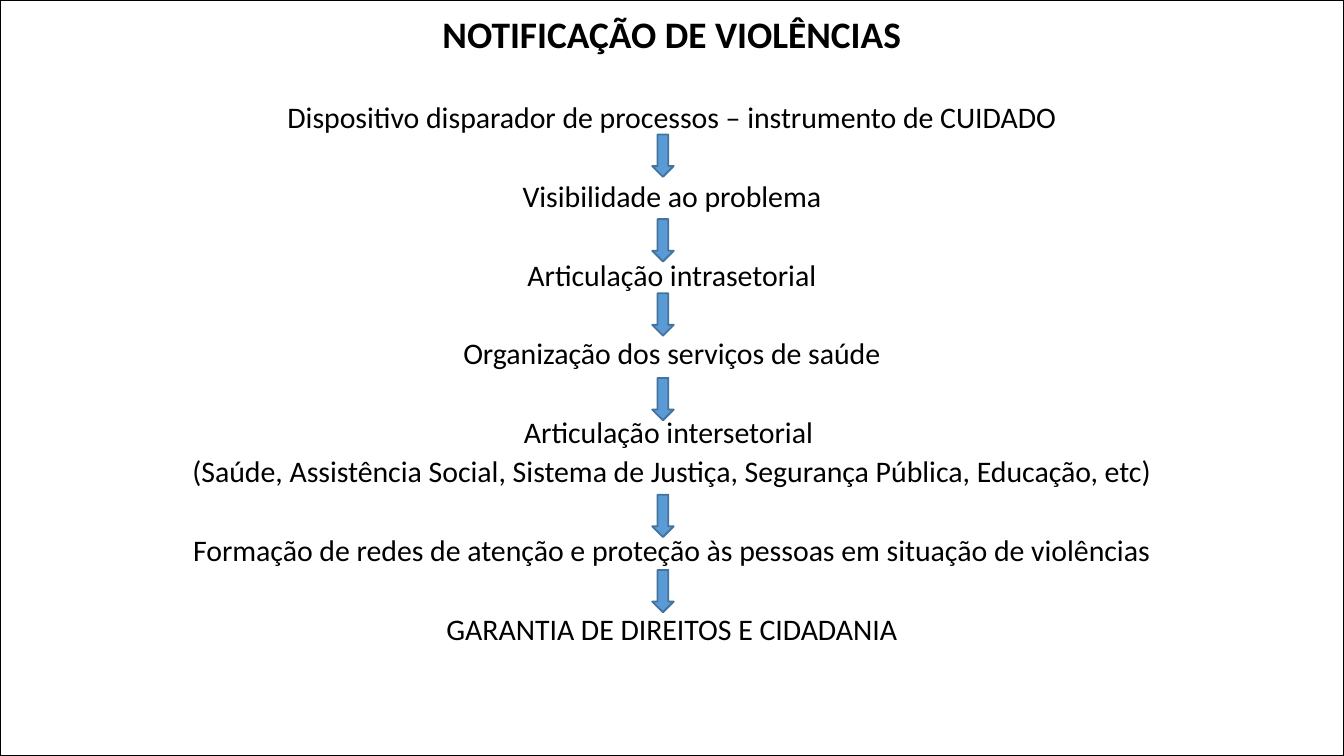
import pptx
import pptx.dml.color
import pptx.enum.shapes
import pptx.enum.text
import pptx.util

RGBColor = pptx.dml.color.RGBColor
Inches = pptx.util.Inches
Pt = pptx.util.Pt
MSO_SHAPE = pptx.enum.shapes.MSO_SHAPE

BLACK = RGBColor(0x00, 0x00, 0x00)
WHITE = RGBColor(0xFF, 0xFF, 0xFF)
ARROW_FILL = RGBColor(0x5B, 0x9B, 0xD5)
ARROW_LINE = RGBColor(0x43, 0x73, 0x9E)

FONT = "Calibri"
LINE_SPACING = 1.1
STEP_GAP = Pt(21.1)  # one line of 16 pt text

SLIDE_W = Inches(10)
SLIDE_H = SLIDE_W * 9 // 16

TITLE = "NOTIFICAÇÃO DE VIOLÊNCIAS"
# Each step is a list of lines; an arrow leads from one step to the next.
STEPS = [
    ["Dispositivo disparador de processos – instrumento de CUIDADO"],
    ["Visibilidade ao problema"],
    ["Articulação intrasetorial"],
    ["Organização dos serviços de saúde"],
    ["Articulação intersetorial ",
     "(Saúde, Assistência Social, Sistema de Justiça, Segurança Pública, Educação, etc)"],
    ["Formação de redes de atenção e proteção às pessoas em situação de violências"],
    ["GARANTIA DE DIREITOS E CIDADANIA"],
]
# Arrow places and size as percentages of the panel
ARROW_TOPS = [17.8, 29, 38.8, 50, 65.45, 75.4]
ARROW_LEFT, ARROW_W, ARROW_H = 48.53, 1.6, 5.6


def add_filled_shape(slide, kind, box, fill, line, line_width):
    sp = slide.shapes.add_shape(kind, *(int(v) for v in box))
    sp.shadow.inherit = False
    sp.fill.solid()
    sp.fill.fore_color.rgb = fill
    sp.line.color.rgb = line
    sp.line.width = Pt(line_width)
    return sp


def write_line(p, text, size=16, bold=False, gap=0):
    p.alignment = pptx.enum.text.PP_ALIGN.CENTER
    p.line_spacing = LINE_SPACING
    p.space_before = gap
    p.space_after = 0
    r = p.add_run()
    r.text = text
    r.font.name = FONT
    r.font.size = Pt(size)
    r.font.bold = bold
    r.font.color.rgb = BLACK


def add_text_panel(slide, box):
    """Title and steps, centred in one framed rectangle."""
    sp = add_filled_shape(slide, MSO_SHAPE.RECTANGLE, box, WHITE, BLACK, 0.75)
    tf = sp.text_frame
    tf.word_wrap = True
    tf.vertical_anchor = pptx.enum.text.MSO_ANCHOR.TOP
    write_line(tf.paragraphs[0], TITLE, size=20, bold=True)
    for step in STEPS:
        for i, text in enumerate(step):
            write_line(tf.add_paragraph(), text, gap=0 if i else STEP_GAP)


def add_step_arrows(slide, box):
    left, top, width, height = box
    for arrow_top in ARROW_TOPS:
        arrow_box = (left + width * ARROW_LEFT / 100,
                     top + height * arrow_top / 100,
                     width * ARROW_W / 100, height * ARROW_H / 100)
        add_filled_shape(slide, MSO_SHAPE.DOWN_ARROW, arrow_box,
                         ARROW_FILL, ARROW_LINE, 1)


def main():
    prs = pptx.Presentation()
    prs.slide_width, prs.slide_height = SLIDE_W, SLIDE_H
    slide = prs.slides.add_slide(prs.slide_layouts[6])
    panel = (0, 0, SLIDE_W, SLIDE_H)
    add_text_panel(slide, panel)
    add_step_arrows(slide, panel)
    prs.save("out.pptx")


if __name__ == "__main__":
    main()
